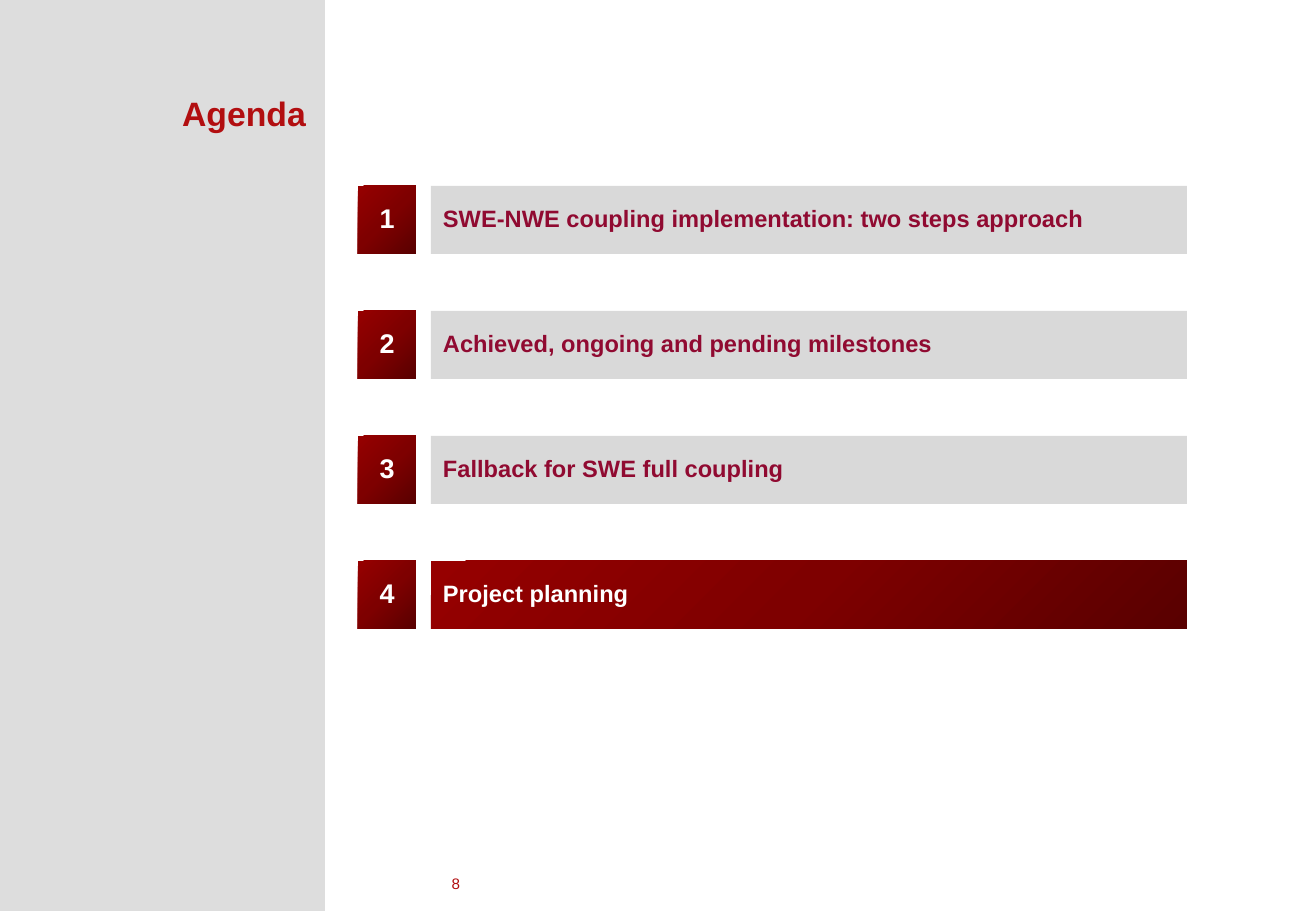
import pptx
import pptx.util
import pptx.oxml
import pptx.oxml.ns
import pptx.dml.color
import pptx.enum.shapes
import pptx.enum.text

RGBColor = pptx.dml.color.RGBColor
PP_ALIGN = pptx.enum.text.PP_ALIGN
MSO_ANCHOR = pptx.enum.text.MSO_ANCHOR

TITLE = "Agenda"
PAGE = "8"
TOPICS = [
    "SWE-NWE coupling implementation: two steps approach",
    "Achieved, ongoing and pending milestones",
    "Fallback for SWE full coupling",
    "Project planning",
]
CURRENT = 4

RED = RGBColor(0xB2, 0x0E, 0x10)
WINE = RGBColor(0x90, 0x0A, 0x31)
WHITE = RGBColor(0xFF, 0xFF, 0xFF)
SIDE_GREY = RGBColor(0xDD, 0xDD, 0xDD)
BAR_GREY = RGBColor(0xD9, 0xD9, 0xD9)
GRADIENT = [
    (0, RGBColor(0x59, 0x00, 0x00)),
    (50, RGBColor(0x7E, 0x00, 0x00)),
    (100, RGBColor(0x96, 0x00, 0x00)),
]

FONT = "Arial"
SCALE = 7526
WIDTH, HEIGHT = 1316, 911
SIDE_WIDTH = 325
ROW_TOP, ROW_STEP, ROW_HEIGHT = 186, 125, 68
NUMBER_LEFT, NUMBER_WIDTH = 358, 58
BAR_LEFT, BAR_WIDTH = 431, 756


def px(*lengths):
    return [pptx.util.Emu(n * SCALE) for n in lengths]


def add_rect(s, box, fill):
    sp = s.shapes.add_shape(pptx.enum.shapes.MSO_SHAPE.RECTANGLE, *px(*box))
    sp.shadow.inherit = False
    sp.line.fill.background()
    if fill is GRADIENT:
        set_gradient(sp)
    else:
        sp.fill.solid()
        sp.fill.fore_color.rgb = fill
    return sp


def set_gradient(sp):
    stops = "".join(
        f'<a:gs pos="{pos * 1000}"><a:srgbClr val="{color}"/></a:gs>'
        for pos, color in GRADIENT
    )
    grad = pptx.oxml.parse_xml(
        f'<a:gradFill {pptx.oxml.ns.nsdecls("a")} rotWithShape="1">'
        f"<a:gsLst>{stops}</a:gsLst>"
        '<a:path path="circle"><a:fillToRect l="100000" t="100000"/></a:path>'
        "</a:gradFill>"
    )
    sp.fill.background()
    props = sp._element.spPr
    props.replace(props.find(pptx.oxml.ns.qn("a:noFill")), grad)


def write(sp, text, size, color, align, anchor, bold=True, spacing=0.9):
    tf = sp.text_frame
    tf.word_wrap = True
    tf.auto_size = pptx.enum.text.MSO_AUTO_SIZE.NONE
    tf.vertical_anchor = anchor
    p = tf.paragraphs[0]
    p.alignment = align
    p.line_spacing = spacing
    p.space_before = pptx.util.Pt(0)
    r = p.add_run()
    r.text = text
    r.font.name = FONT
    r.font.size = pptx.util.Pt(size)
    r.font.bold = bold
    r.font.color.rgb = color


def set_insets(sp, side, edge):
    tf = sp.text_frame
    tf.margin_left, tf.margin_right = px(side, side)
    tf.margin_top, tf.margin_bottom = px(edge, edge)


def main():
    prs = pptx.Presentation()
    prs.slide_width, prs.slide_height = px(WIDTH, HEIGHT)
    s = prs.slides.add_slide(prs.slide_layouts[5])

    side = add_rect(s, (0, 0, SIDE_WIDTH, HEIGHT), SIDE_GREY)
    s.shapes._spTree.insert(2, side._element)

    title = s.shapes.title
    title.left, title.top, title.width, title.height = px(10, 91, 296, 106)
    set_insets(title, 0, 6)
    write(title, TITLE, 20, RED, PP_ALIGN.RIGHT, MSO_ANCHOR.TOP)

    for number, topic in enumerate(TOPICS, 1):
        top = ROW_TOP + (number - 1) * ROW_STEP
        current = number == CURRENT
        bar = add_rect(s, (BAR_LEFT, top, BAR_WIDTH, ROW_HEIGHT),
                       GRADIENT if current else BAR_GREY)
        write(bar, topic, 14, WHITE if current else WINE,
              PP_ALIGN.LEFT, MSO_ANCHOR.MIDDLE)
        box = add_rect(s, (NUMBER_LEFT, top, NUMBER_WIDTH, ROW_HEIGHT), GRADIENT)
        write(box, str(number), 16, WHITE, PP_ALIGN.CENTER, MSO_ANCHOR.MIDDLE)

    page = s.shapes.add_textbox(*px(432, 871, 48, 24))
    set_insets(page, 5, 5)
    write(page, PAGE, 9, RED, PP_ALIGN.CENTER, MSO_ANCHOR.MIDDLE,
          bold=False, spacing=1.0)

    prs.save("out.pptx")


if __name__ == "__main__":
    main()
